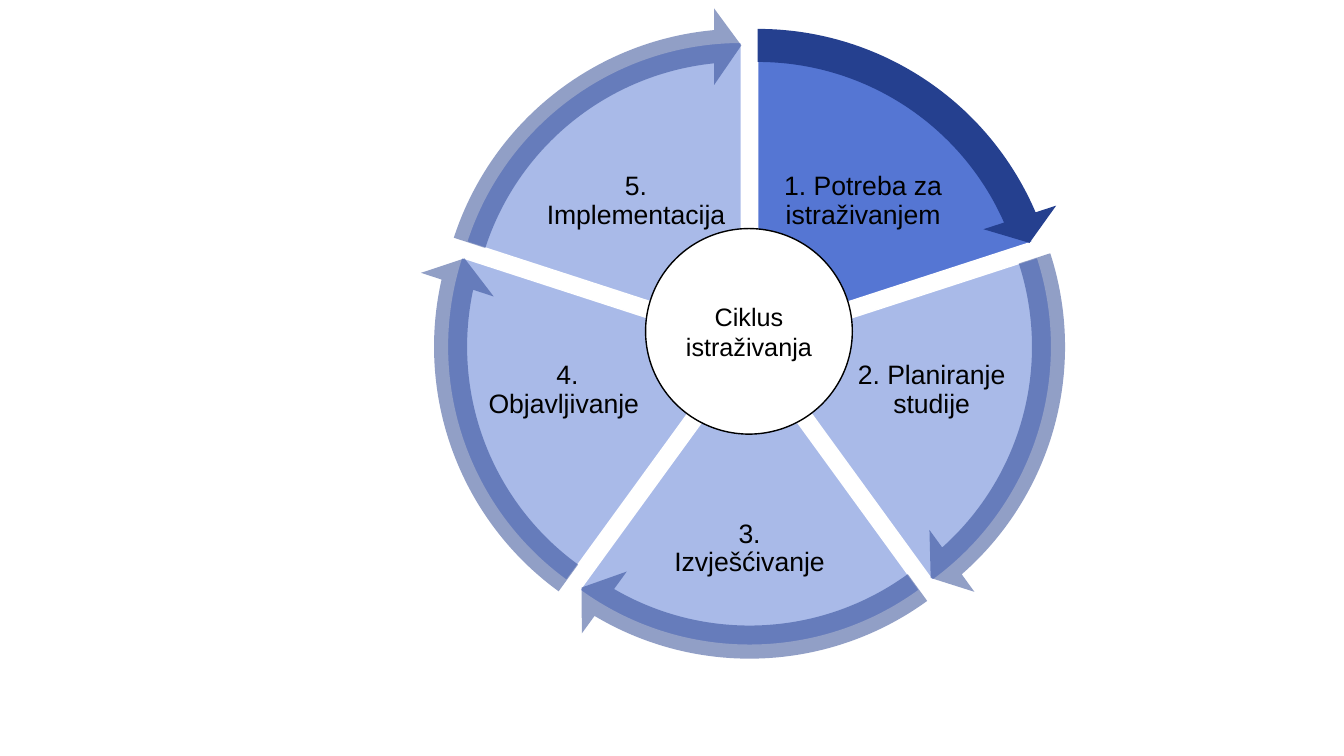
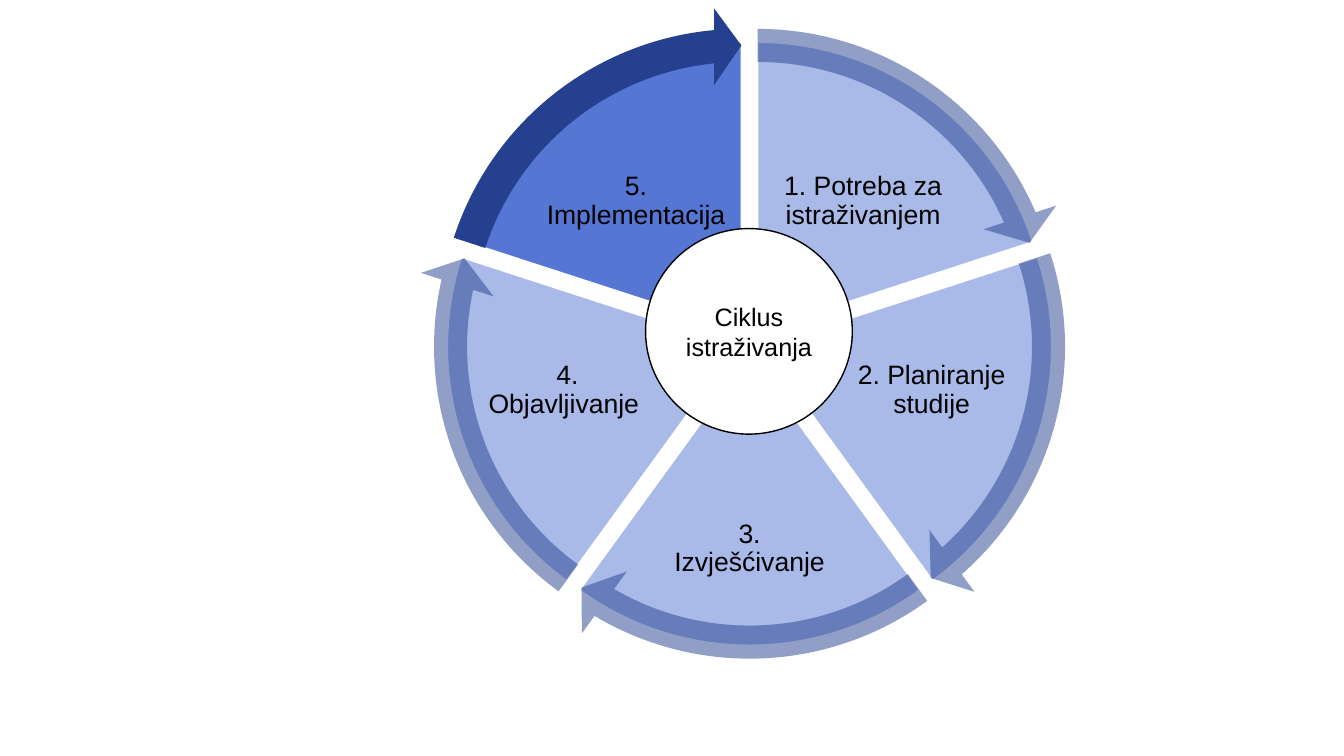
import math

from lxml import etree
from pptx import Presentation
from pptx.dml.color import RGBColor
from pptx.enum import shapes, text
from pptx.oxml import ns
from pptx.util import Cm, Pt

COLOURS = {"wedge": "5576D3", "arrow": "25408F", "white": "FFFFFF", "black": "000000"}

# Label and its insets (left, top, right, bottom) in the wedge's full circle, in cm
STEPS = [
    ("1. Potreba za istraživanjem", (7.65, 2.51, 2.34, 9.04)),
    ("2. Planiranje studije", (9.42, 6.71, 0.91, 4.5)),
    ("3. Izvješćivanje", (5.26, 10.29, 5.26, 0.58)),
    ("4. Objavljivanje ", (0.91, 6.71, 9.42, 4.5)),
    ("5. Implementacija", (2.34, 2.51, 7.65, 9.04)),
]
HIGHLIGHTED_STEPS = [0, 4]  # one per slide

CENTRE_X, CENTRE_Y = 18.89, 8.63
RADIUS = 7.28
WEDGE_OFFSET = 0.35
ARROW_SIZE = 16.33
SWEEP = 360 / len(STEPS)
# Distance from an arc's end to its Bézier control point
HANDLE = RADIUS * 4 / 3 * math.tan(math.radians(SWEEP / 4))


def paint(shape, fill, line=None, opaque=True):
    shape.shadow.inherit = False
    shape.fill.solid()
    shape.fill.fore_color.rgb = RGBColor.from_string(COLOURS[fill])
    if not opaque:
        colour = shape.fill._xPr.find(".//" + ns.qn("a:srgbClr"))
        etree.SubElement(colour, ns.qn("a:alpha"), val="50000")
    if line:
        shape.line.color.rgb = RGBColor.from_string(COLOURS[line])
        shape.line.width = Pt(1)
    else:
        shape.line.fill.background()


def write_label(shape, label, size, line_spacing):
    frame = shape.text_frame
    frame.word_wrap = True
    frame.vertical_anchor = text.MSO_ANCHOR.MIDDLE
    para = frame.paragraphs[0]
    para.text = label
    para.alignment = text.PP_ALIGN.CENTER
    para.line_spacing = line_spacing
    para.font.name = "Arial"
    para.font.size = Pt(size)
    para.font.color.rgb = RGBColor.from_string(COLOURS["black"])


deck = Presentation()
deck.slide_width, deck.slide_height = Cm(33.87), Cm(19.05)

for highlighted in HIGHLIGHTED_STEPS:
    page = deck.slides.add_slide(deck.slide_layouts[6])

    # Each wedge is moved outwards along its middle angle
    wedge_centres = []
    for index, (label, insets) in enumerate(STEPS):
        start = math.radians(270 + SWEEP * index)
        end = start + math.radians(SWEEP)
        middle = (start + end) / 2
        x = CENTRE_X + WEDGE_OFFSET * math.cos(middle)
        y = CENTRE_Y + WEDGE_OFFSET * math.sin(middle)
        wedge_centres.append((x, y))

        corners = []
        for angle, handle in ((start, 0), (start, HANDLE), (end, -HANDLE), (end, 0)):
            corners.append((
                Cm(x + RADIUS * math.cos(angle) - handle * math.sin(angle)),
                Cm(y + RADIUS * math.sin(angle) + handle * math.cos(angle))))
        outline = page.shapes.build_freeform(*corners[0])
        outline.add_line_segments(corners[1:] + [(Cm(x), Cm(y)), corners[0]], close=True)
        wedge = outline.convert_to_shape()

        # The frame becomes the full circle, and the first three lines become one curve
        left, top, size = Cm(x - RADIUS), Cm(y - RADIUS), Cm(2 * RADIUS)
        path = wedge._element.find(".//" + ns.qn("a:path"))
        for point in path.iter(ns.qn("a:pt")):
            point.set("x", str(int(point.get("x")) + wedge.left - left))
            point.set("y", str(int(point.get("y")) + wedge.top - top))
        path.set("w", str(size))
        path.set("h", str(size))
        wedge.left, wedge.top, wedge.width, wedge.height = left, top, size, size
        curve = etree.Element(ns.qn("a:cubicBezTo"))
        for line in path.findall(ns.qn("a:lnTo"))[:3]:
            curve.append(line[0])
            path.remove(line)
        path.insert(1, curve)

        paint(wedge, "wedge", "white", opaque=index == highlighted)
        write_label(wedge, label, 19, 0.9)
        frame = wedge.text_frame
        (frame.margin_left, frame.margin_top,
         frame.margin_right, frame.margin_bottom) = map(Cm, insets)

    for index, (x, y) in enumerate(wedge_centres):
        arrow = page.shapes.add_shape(
            shapes.MSO_SHAPE.CIRCULAR_ARROW,
            Cm(x - ARROW_SIZE / 2), Cm(y - ARROW_SIZE / 2), Cm(ARROW_SIZE), Cm(ARROW_SIZE))
        # Angles are stored in units of 5/3 degree
        tail = (270 + SWEEP * index) % 360 * 0.6
        head = (336.54 + SWEEP * index) % 360 * 0.6
        for number, value in enumerate((5.1 / 100, 5.46 * 0.6, head, tail, 5.9 / 100)):
            arrow.adjustments[number] = value
        paint(arrow, "arrow", opaque=index == highlighted)

    hub = page.shapes.add_shape(
        shapes.MSO_SHAPE.OVAL, Cm(16.27), Cm(5.76), Cm(5.21), Cm(5.18))
    paint(hub, "white", "black")
    write_label(hub, "Ciklus istraživanja", 18, 1.0)

deck.save("out.pptx")
